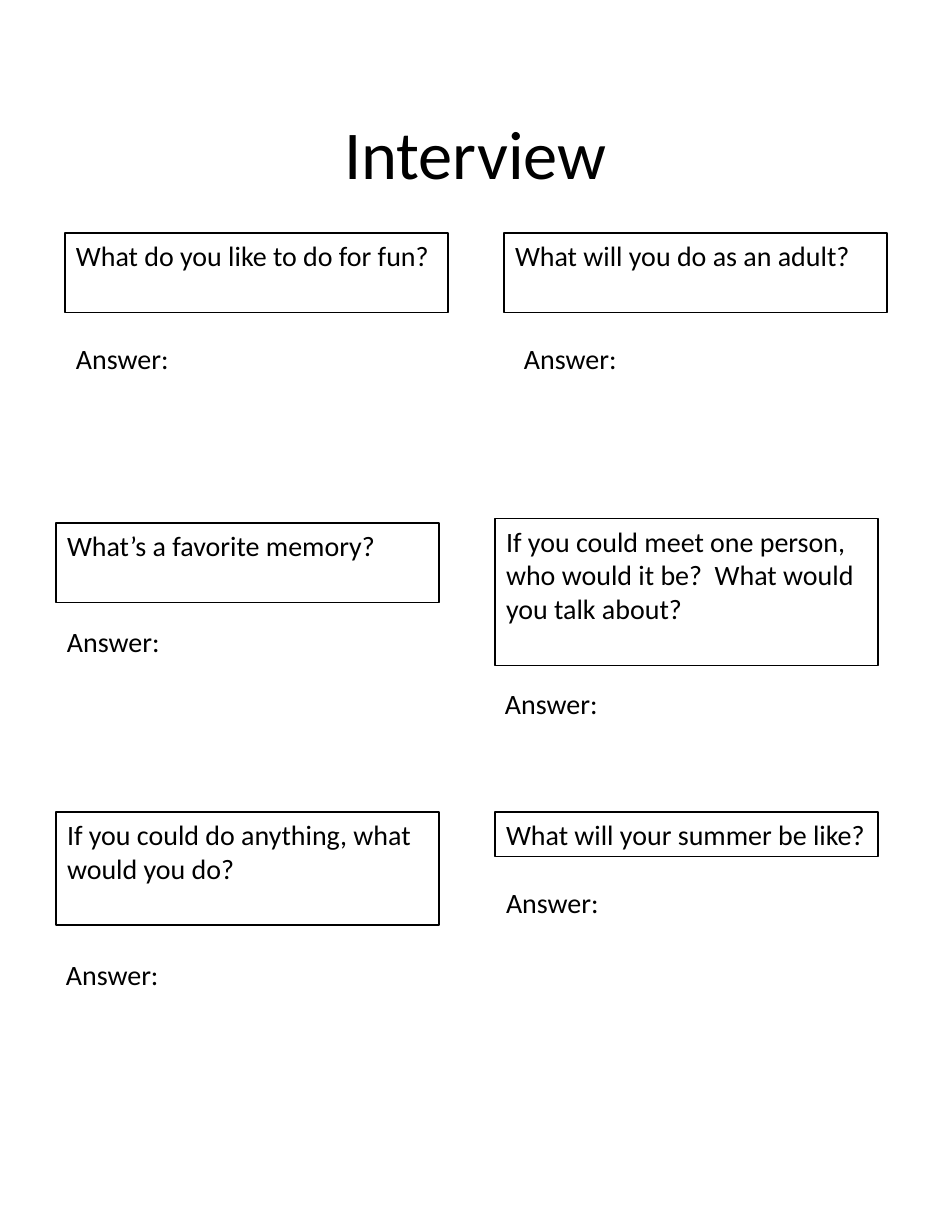
from dataclasses import dataclass

from pptx import Presentation
from pptx import util as u
from pptx.dml.color import RGBColor
from pptx.enum import shapes, text
from pptx.shapes.autoshape import Shape
from pptx.slide import Slide


@dataclass(frozen=True)
class Theme:
    font: str = "Calibri"
    ink: RGBColor = RGBColor(0, 0, 0)
    title_size: int = 44
    body_size: int = 18
    line_width: float = 0.75


@dataclass(frozen=True)
class Question:
    wording: str
    left: float
    top: float
    height: float
    answer_left: float
    answer_top: float


THEME = Theme()
QUESTION_WIDTH = 3.42
ANSWER_WIDTH = 3.33
ANSWER_HEIGHT = 0.4

QUESTIONS = [
    Question("What do you like to do for fun?", 0.58, 2.08, 0.71, 0.58, 3),
    Question("What will you do as an adult?", 4.5, 2.08, 0.71, 4.58, 3),
    Question("What’s a favorite memory?", 0.5, 4.67, 0.71, 0.5, 5.53),
    Question(
        "If you could meet one person, who would it be?  What would you talk about?",
        4.42, 4.63, 1.31, 4.41, 6.08,
    ),
    Question("If you could do anything, what would you do?", 0.5, 7.25, 1.01, 0.49, 8.5),
    Question("What will your summer be like?", 4.42, 7.25, 0.4, 4.42, 7.86),
]


def write(
    box: Shape,
    wording: str,
    size: int = THEME.body_size,
    align: text.PP_ALIGN = text.PP_ALIGN.LEFT,
    anchor: text.MSO_ANCHOR = text.MSO_ANCHOR.TOP,
) -> None:
    frame = box.text_frame
    frame.text = wording
    frame.word_wrap = True
    frame.vertical_anchor = anchor
    para = frame.paragraphs[0]
    para.alignment = align
    font = para.runs[0].font
    font.name = THEME.font
    font.size = u.Pt(size)
    font.color.rgb = THEME.ink


def add_text(page: Slide, left: float, top: float, width: float, height: float) -> Shape:
    return page.shapes.add_textbox(
        u.Inches(left), u.Inches(top), u.Inches(width), u.Inches(height)
    )


def add_title(page: Slide, wording: str) -> None:
    box = add_text(page, 0.42, 0.44, 7.65, 1.83)
    write(box, wording, THEME.title_size, text.PP_ALIGN.CENTER, text.MSO_ANCHOR.MIDDLE)


def add_question(page: Slide, question: Question) -> None:
    box = page.shapes.add_shape(
        shapes.MSO_SHAPE.RECTANGLE,
        u.Inches(question.left),
        u.Inches(question.top),
        u.Inches(QUESTION_WIDTH),
        u.Inches(question.height),
    )
    box.shadow.inherit = False
    box.fill.background()
    box.line.color.rgb = THEME.ink
    box.line.width = u.Pt(THEME.line_width)
    write(box, question.wording)


def add_answer(page: Slide, question: Question) -> None:
    box = add_text(
        page, question.answer_left, question.answer_top, ANSWER_WIDTH, ANSWER_HEIGHT
    )
    write(box, "Answer:")


def main() -> None:
    deck = Presentation()
    deck.slide_width = u.Inches(8.5)
    deck.slide_height = u.Inches(11)
    page = deck.slides.add_slide(deck.slide_layouts[6])
    add_title(page, "Interview")
    for question in QUESTIONS:
        add_question(page, question)
        add_answer(page, question)
    deck.save("out.pptx")


if __name__ == "__main__":
    main()
